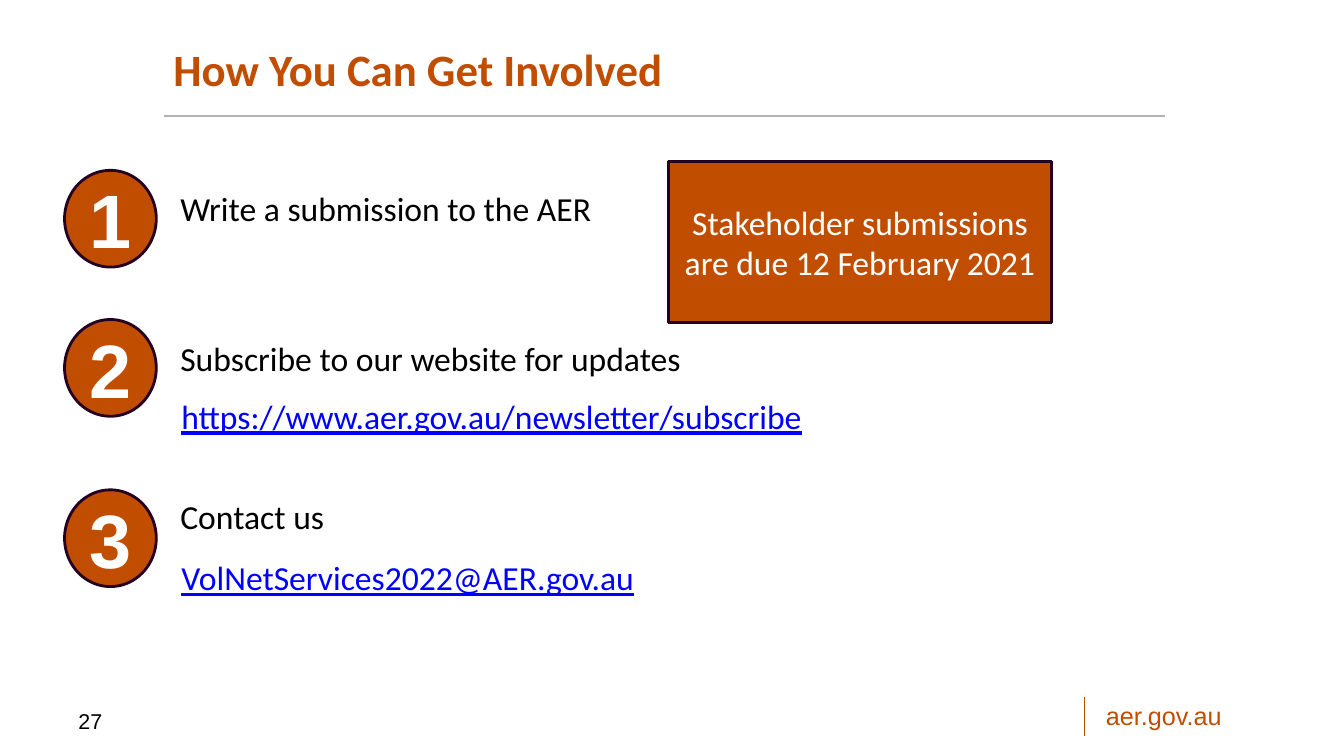
from lxml import etree
from pptx import Presentation
from pptx.dml.color import RGBColor
from pptx.enum.shapes import MSO_CONNECTOR, MSO_SHAPE
from pptx.enum.text import MSO_ANCHOR, PP_ALIGN
from pptx.oxml.ns import qn
from pptx.util import Emu, Pt

PX = 9144
WIDE, HIGH = 1333, 750
RUST, RULE, EDGE = "C14E00", "BD4C00", "230023"
BLACK, WHITE, BLUE, GREY = "000000", "FFFFFF", "0000FF", "B2B2B2"
STRAIGHT = MSO_CONNECTOR.STRAIGHT
RECT, OVAL = MSO_SHAPE.RECTANGLE, MSO_SHAPE.OVAL
TOP, MIDDLE = MSO_ANCHOR.TOP, MSO_ANCHOR.MIDDLE
LEFT, CENTER = PP_ALIGN.LEFT, PP_ALIGN.CENTER

BODY = {"name": "Calibri", "size": Pt(24)}
LINK = {**BODY, "underline": True}
HEAD = {"name": "Calibri", "size": Pt(32), "bold": True}
DIGIT = {"name": "Arial", "size": Pt(54), "bold": True}
SITE = {"name": "Arial", "size": Pt(18)}
PAGE = {"name": "Arial", "size": Pt(15.3)}

STEPS = [
    (169, 13, "Write a submission to the AER", None, 0),
    (317, 13, "Subscribe to our website for updates",
     "https://www.aer.gov.au/newsletter/subscribe", 71),
    (486, 1, "Contact us", "VolNetServices2022@AER.gov.au", 62),
]


def color(code):
    """Turn a hex string into a colour."""
    return RGBColor.from_string(code)


def scale(*sizes):
    """Turn px lengths into EMU."""
    return [Emu(n * PX) for n in sizes]


def write(shape, text, style, ink, anchor=TOP, align=LEFT, wrap=True):
    """Put one styled paragraph into a shape."""
    frame = shape.text_frame
    frame.word_wrap = wrap
    frame.vertical_anchor = anchor
    para = frame.paragraphs[0]
    para.alignment = align
    run = para.add_run()
    run.text = text
    for key, value in style.items():
        setattr(run.font, key, value)
    run.font.color.rgb = color(ink)


def label(slide, box, text, style, ink, **opts):
    """Add a text box."""
    write(slide.shapes.add_textbox(*scale(*box)), text, style, ink, **opts)


def badge(slide, kind, box, text, style, wrap=True):
    """Add a rust shape with centred white text."""
    shape = slide.shapes.add_shape(kind, *scale(*box))
    shape.shadow.inherit = False
    shape.fill.solid()
    shape.fill.fore_color.rgb = color(RUST)
    shape.line.color.rgb = color(EDGE)
    shape.line.width = Pt(2)
    write(shape, text, style, WHITE, MIDDLE, CENTER, wrap)


def rule(slide, ends, ink, width):
    """Add a plain straight line."""
    line = slide.shapes.add_connector(STRAIGHT, *scale(*ends))
    line.line.color.rgb = color(ink)
    line.line.width = Pt(width)
    etree.SubElement(line._element.spPr, qn("a:effectLst"))


def header(slide, x, y, w, h):
    """Add the title and the rule under it."""
    label(slide, (x, y, 559, h), "How You Can Get Involved", HEAD, RUST,
          anchor=MIDDLE)
    rule(slide, (x + 1, y + h - 1, x + w, y + h - 1), GREY, 1.5)


def step(slide, x, y, num, drop, text, link, gap):
    """Add a numbered step with its line and link."""
    badge(slide, OVAL, (x, y, 91, 96), str(num), DIGIT, wrap=False)
    label(slide, (x + 105, y + drop, 560, 50), text, BODY, BLACK)
    if link:
        label(slide, (x + 106, y + gap, 642, 50), link, LINK, BLUE, wrap=False)


def footer(slide, x, y, w):
    """Add the page number and the site address."""
    label(slide, (x, y + 8, 94, 31), "27", PAGE, BLACK)
    rule(slide, (x + w - 221, y + 1, x + w - 221, y + 40), RULE, 0.75)
    label(slide, (x + w - 210, y, 210, 40), "aer.gov.au", SITE, RUST)


def main():
    """Build and save the slide."""
    deck = Presentation()
    deck.slide_width, deck.slide_height = scale(WIDE, HIGH)
    slide = deck.slides.add_slide(deck.slide_layouts[6])
    header(slide, 162, 21, 993, 95)
    for num, (y, *parts) in enumerate(STEPS, 1):
        step(slide, 64, y, num, *parts)
    badge(slide, RECT, (663, 160, 380, 160),
          "Stakeholder submissions are due 12 February 2021", BODY)
    footer(slide, 68, 690, 1229)
    deck.save("out.pptx")


if __name__ == "__main__":
    main()
